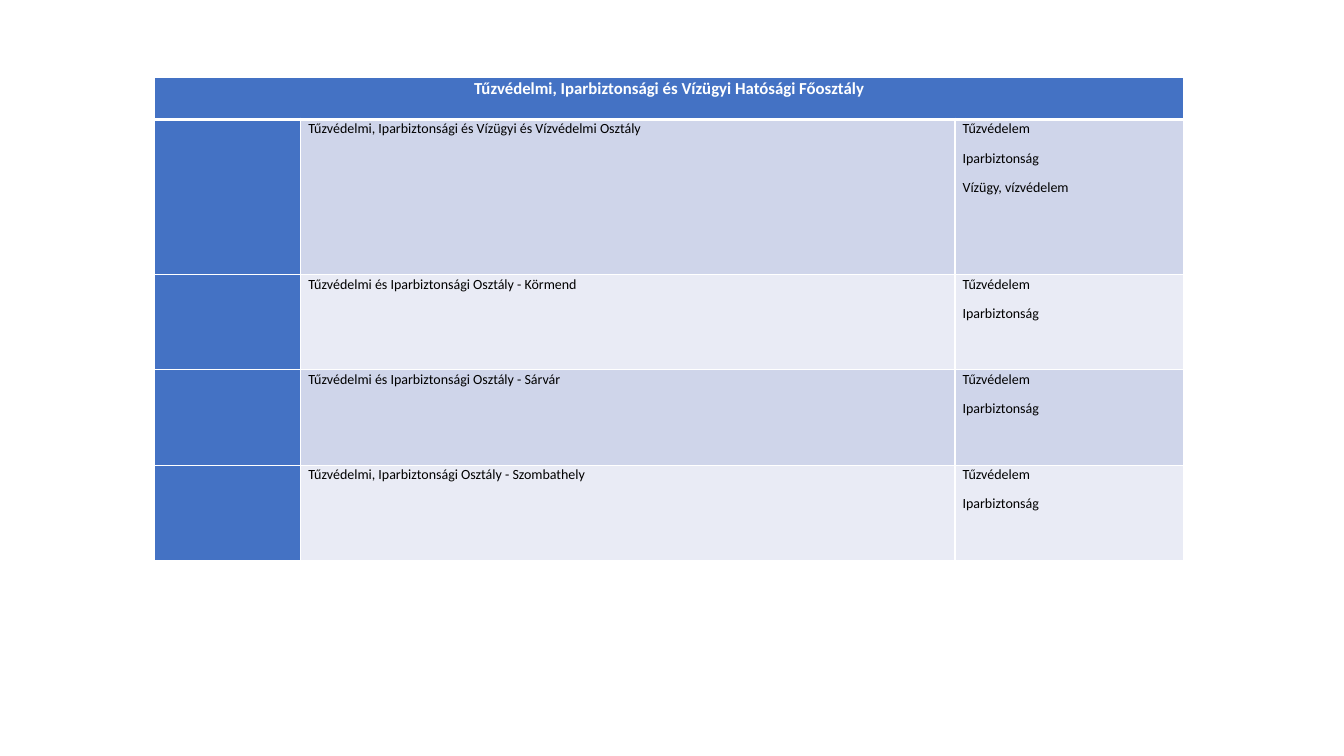
from lxml import etree
from pptx import Presentation
from pptx import util as u
from pptx.dml.color import RGBColor
from pptx.enum import text
from pptx.oxml import ns

BLUE = RGBColor(0x44, 0x72, 0xC4)
BANDS = RGBColor(0xCF, 0xD5, 0xEA), RGBColor(0xE9, 0xEB, 0xF5)
WHITE = RGBColor(0xFF, 0xFF, 0xFF)
BLACK = RGBColor(0x00, 0x00, 0x00)

HEADING = "Tűzvédelmi, Iparbiztonsági és Vízügyi Hatósági Főosztály"
FIRE_AND_INDUSTRY = ["Tűzvédelem", "Iparbiztonság"]
DEPARTMENTS = [
    ("Tűzvédelmi, Iparbiztonsági és Vízügyi és Vízvédelmi Osztály",
     FIRE_AND_INDUSTRY + ["Vízügy, vízvédelem"]),
    ("Tűzvédelmi és Iparbiztonsági Osztály - Körmend", FIRE_AND_INDUSTRY),
    ("Tűzvédelmi és Iparbiztonsági Osztály - Sárvár", FIRE_AND_INDUSTRY),
    ("Tűzvédelmi, Iparbiztonsági Osztály - Szombathely", FIRE_AND_INDUSTRY),
]
COLUMN_WIDTHS = [3.68, 16.49, 5.77]
ROW_HEIGHTS = [1.07, 3.91, 2.4, 2.4, 2.4]

HEADING_FONT = {"name": "Calibri", "size": u.Pt(12), "bold": True}
BODY_FONT = {"name": "Calibri", "size": u.Pt(10), "bold": False}
PARAGRAPH = {"line_spacing": 1.07, "space_after": u.Pt(8)}
MARGINS = {"margin_left": u.Cm(0.19), "margin_right": u.Cm(0.19),
           "margin_top": 0, "margin_bottom": 0}
PLAIN_STYLE = {"first_row": False, "horz_banding": False}


def apply(target, values):
    """Set every attribute in values on the target."""
    for attribute, value in values.items():
        setattr(target, attribute, value)


def set_borders(cell, top, bottom):
    """Draw white borders with the given top and bottom widths in points."""
    properties = cell._tc.get_or_add_tcPr()
    for side, width in {"L": 1, "R": 1, "T": top, "B": bottom}.items():
        border = etree.SubElement(properties, ns.qn(f"a:ln{side}"), w=str(u.Pt(width)))
        fill = etree.SubElement(border, ns.qn("a:solidFill"))
        etree.SubElement(fill, ns.qn("a:srgbClr"), val=str(WHITE))


def fill_cell(cell, colour):
    """Give a cell its margins and solid fill."""
    apply(cell, MARGINS)
    cell.fill.solid()
    cell.fill.fore_color.rgb = colour


def write_cell(cell, lines, font, colour, alignment=text.PP_ALIGN.LEFT):
    """Write one paragraph per line in a cell."""
    cell.text = "\n".join(lines)
    for paragraph in cell.text_frame.paragraphs:
        apply(paragraph, PARAGRAPH | {"alignment": alignment})
        for run in paragraph.runs:
            apply(run.font, font)
            run.font.color.rgb = colour


def add_grid(slide):
    """Add the empty table with its sizes, borders and merged heading."""
    grid = slide.shapes.add_table(
        len(ROW_HEIGHTS), len(COLUMN_WIDTHS), u.Cm(3.9), u.Cm(1.94),
        u.Cm(sum(COLUMN_WIDTHS)), u.Cm(sum(ROW_HEIGHTS))).table
    apply(grid, PLAIN_STYLE)
    for column, width in zip(grid.columns, COLUMN_WIDTHS):
        column.width = u.Cm(width)
    for index, (row, height) in enumerate(zip(grid.rows, ROW_HEIGHTS)):
        row.height = u.Cm(height)
        for cell in row.cells:
            set_borders(cell, 3 if index == 1 else 1, 3 if index == 0 else 1)
            fill_cell(cell, BLUE)
    grid.cell(0, 0).merge(grid.cell(0, len(COLUMN_WIDTHS) - 1))
    return grid


def main():
    """Build the slide of departments and their fields."""
    deck = Presentation()
    apply(deck, {"slide_width": u.Cm(33.87), "slide_height": u.Cm(19.05)})
    slide = deck.slides.add_slide(deck.slide_layouts[6])
    grid = add_grid(slide)
    write_cell(grid.cell(0, 0), [HEADING], HEADING_FONT, WHITE, text.PP_ALIGN.CENTER)
    for row, (department, fields) in enumerate(DEPARTMENTS, start=1):
        for column, lines in enumerate([[department], fields], start=1):
            cell = grid.cell(row, column)
            fill_cell(cell, BANDS[(row - 1) % 2])
            write_cell(cell, lines, BODY_FONT, BLACK)
    deck.save("out.pptx")


if __name__ == "__main__":
    main()
